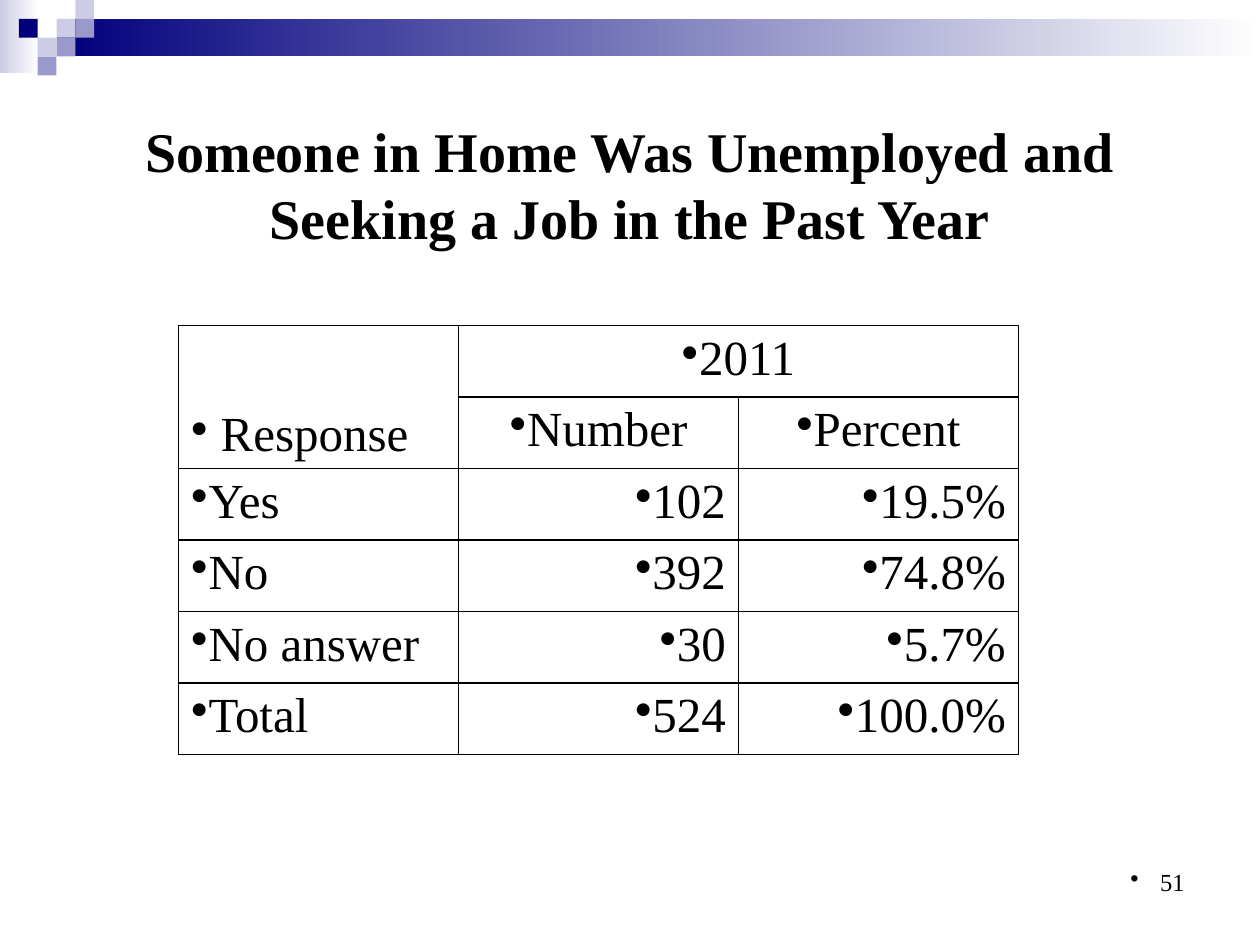
import pptx
import pptx.dml.color
import pptx.enum.shapes
import pptx.enum.text
import pptx.oxml
import pptx.oxml.ns
import pptx.util

Cm = pptx.util.Cm
Align = pptx.enum.text.PP_ALIGN
Anchor = pptx.enum.text.MSO_ANCHOR
NAVY, PERIWINKLE, LAVENDER, WHITE, BLACK = "00007D", "9999CC", "CCCCE6", "FFFFFF", "000000"


def colour(code):
    """Turn a hex string into a colour."""
    return pptx.dml.color.RGBColor.from_string(code)


def style_paragraph(para, size, align, bold=False):
    """Set alignment and font of a paragraph's runs."""
    para.alignment = align
    for span in para.runs:
        span.font.name = "Times New Roman"
        span.font.size = pptx.util.Pt(size)
        span.font.bold = bold
        span.font.color.rgb = colour(BLACK)


def add_bullet(para, hanging=0):
    """Give a paragraph a round bullet with a hanging indent."""
    properties = para._p.get_or_add_pPr()
    properties.set("marL", str(Cm(hanging)))
    properties.set("indent", str(-Cm(hanging)))
    bullet = pptx.oxml.parse_xml(f'<a:buChar {pptx.oxml.ns.nsdecls("a")} char="•"/>')
    properties.append(bullet)


def add_block(page, left, top, width, height, *codes):
    """Draw a borderless rectangle, solid or fading between two colours."""
    block = page.shapes.add_shape(
        pptx.enum.shapes.MSO_SHAPE.RECTANGLE, Cm(left), Cm(top), Cm(width), Cm(height))
    block.shadow.inherit = False
    block.line.fill.background()
    if len(codes) == 1:
        block.fill.solid()
        block.fill.fore_color.rgb = colour(codes[0])
        return
    block.fill.gradient()
    block.fill.gradient_angle = 0
    for stop, code in zip(block.fill.gradient_stops, codes):
        stop.color.rgb = colour(code)


def add_banner(page, left, top, width, side):
    """Draw the fading bar and its mosaic of squares."""
    add_block(page, left, top, 0.79, 1.47, LAVENDER, WHITE)
    add_block(page, left + 3 * side, top + side, width - 3 * side, 2 * side, NAVY, WHITE)
    squares = [(3, 1, LAVENDER), (4, 0, LAVENDER), (4, 1, PERIWINKLE), (2, 2, LAVENDER),
               (1, 1, NAVY), (3, 2, PERIWINKLE), (2, 3, PERIWINKLE)]
    for column, row, code in squares:
        add_block(page, left + column * side, top + row * side, side, side, code)


def add_text(page, left, top, width, height, text, size, align, bold=False):
    """Place a one-paragraph text box and return it."""
    box = page.shapes.add_textbox(Cm(left), Cm(top), Cm(width), Cm(height))
    box.text_frame.word_wrap = True
    box.text_frame.text = text
    style_paragraph(box.text_frame.paragraphs[0], size, align, bold)
    return box


def add_title(page, left, top, width, height):
    """Place the slide title, centred in its box."""
    box = add_text(page, left, top, width, height,
                   "Someone in Home Was Unemployed and Seeking a Job in the Past Year",
                   32, Align.CENTER, True)
    box.text_frame.vertical_anchor = Anchor.MIDDLE


def add_page_number(page, left, top, width, height):
    """Place the bulleted page number."""
    box = add_text(page, left, top, width, height, "51", 14, Align.RIGHT)
    add_bullet(box.text_frame.paragraphs[0], 0.6)


def add_borders(cell):
    """Draw thin black lines on all four sides of a cell."""
    properties = cell._tc.get_or_add_tcPr()
    for position, side in enumerate("LRTB"):
        properties.insert(position, pptx.oxml.parse_xml(
            f'<a:ln{side} {pptx.oxml.ns.nsdecls("a")} w="{pptx.util.Pt(1)}"><a:solidFill>'
            f'<a:srgbClr val="{BLACK}"/></a:solidFill></a:ln{side}>'))


def add_response_table(page, left, top, width, height):
    """Build the table of survey responses."""
    rows = [(" Response", "2011", ""), ("", "Number", "Percent"),
            ("Yes", "102", "19.5%"), ("No", "392", "74.8%"),
            ("No answer", "30", "5.7%"), ("Total", "524", "100.0%")]
    frame = page.shapes.add_table(len(rows), 3, Cm(left), Cm(top), Cm(width), Cm(height))
    table = frame.table
    table.first_row = table.horz_banding = False
    table.cell(0, 0).merge(table.cell(1, 0))
    table.cell(0, 1).merge(table.cell(0, 2))
    table.cell(0, 0).vertical_anchor = Anchor.BOTTOM
    for row, texts in enumerate(rows):
        for column, text in enumerate(texts):
            cell = table.cell(row, column)
            cell.fill.background()
            add_borders(cell)
            if not text:
                continue
            cell.text_frame.text = text
            para = cell.text_frame.paragraphs[0]
            add_bullet(para)
            value_align = Align.CENTER if row < 2 else Align.RIGHT
            style_paragraph(para, 28, value_align if column else Align.LEFT)


def main():
    """Build and save the slide."""
    deck = pptx.Presentation()
    deck.slide_width, deck.slide_height = Cm(25.4), Cm(19.05)
    page = deck.slides.add_slide(deck.slide_layouts[6])
    add_banner(page, 0, 0, 25.4, 0.38)
    add_title(page, 1.27, 1.7, 22.86, 4.01)
    add_page_number(page, 18.21, 17.35, 5.92, 1.32)
    add_response_table(page, 3.6, 6.56, 16.93, 8.1)
    deck.save("out.pptx")


if __name__ == "__main__":
    main()
